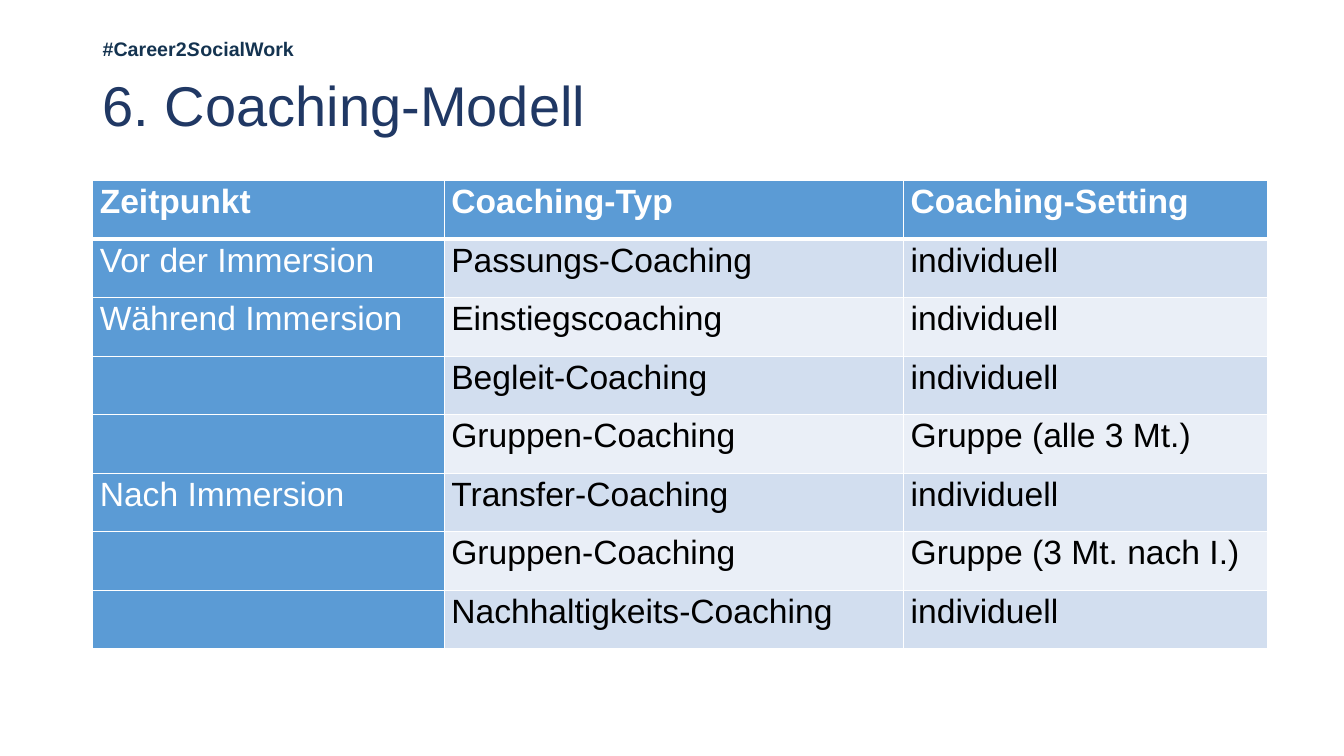
from pptx import Presentation
from pptx.dml.color import RGBColor
from pptx.enum.text import MSO_ANCHOR as Anchor, MSO_AUTO_SIZE as AutoSize, PP_ALIGN as Align
from pptx.oxml import parse_xml
from pptx.oxml.ns import nsdecls
from pptx.util import Inches, Pt

NAVY = RGBColor(0x20, 0x38, 0x64)
PETROL = RGBColor(0x14, 0x33, 0x50)
BLUE = RGBColor(0x5B, 0x9B, 0xD5)
BAND_DARK = RGBColor(0xD2, 0xDE, 0xEF)
BAND_LIGHT = RGBColor(0xEA, 0xEF, 0xF7)
WHITE = RGBColor(0xFF, 0xFF, 0xFF)
BLACK = RGBColor(0, 0, 0)

SLIDE_WIDTH, SLIDE_HEIGHT = Inches(13.33), Inches(7.5)

# Left, top, width and height in percent of the slide
HASHTAG_BOX = (6.9, 4.13, 32.1, 4.53)
TITLE_BOX = (6.9, 9.33, 86.25, 10)
TABLE_BOX = (6.9, 23.87, 87.4, 62)

# Text and character spacing in hundredths of a point
HASHTAG = [("#Career", 0), ("2", 10), ("S", 30), ("ocialWork", 0)]
COLUMN_WEIGHTS = [3.49, 4.56, 3.61]
COACHING_ROWS = [
    ("Zeitpunkt", "Coaching-Typ", "Coaching-Setting"),
    ("Vor der Immersion", "Passungs-Coaching", "individuell"),
    ("Während Immersion", "Einstiegscoaching", "individuell"),
    ("", "Begleit-Coaching", "individuell"),
    ("", "Gruppen-Coaching", "Gruppe (alle 3 Mt.)"),
    ("Nach Immersion", "Transfer-Coaching", "individuell"),
    ("", "Gruppen-Coaching", "Gruppe (3 Mt. nach I.)"),
    ("", "Nachhaltigkeits-Coaching", "individuell"),
]


def to_lengths(box):
    left, top, width, height = box
    return (int(SLIDE_WIDTH * left / 100), int(SLIDE_HEIGHT * top / 100),
            int(SLIDE_WIDTH * width / 100), int(SLIDE_HEIGHT * height / 100))


def apply(target, values):
    for name, value in values.items():
        setattr(target, name, value)


def add_span(para, text, color, **values):
    span = para.add_run()
    span.text = text
    apply(span.font, {"name": "Arial", **values})
    span.font.color.rgb = color
    return span


def add_hashtag(page, box):
    frame = page.shapes.add_textbox(*to_lengths(box)).text_frame
    apply(frame, {"word_wrap": True, "vertical_anchor": Anchor.BOTTOM,
                  "auto_size": AutoSize.SHAPE_TO_FIT_TEXT})
    for text, spacing in HASHTAG:
        span = add_span(frame.paragraphs[0], text, PETROL,
                        size=Pt(14), bold=True, italic=text == "S")
        if spacing:
            span.font._element.set("spc", str(spacing))


def fill_title(page, box):
    title = page.shapes.title
    apply(title, dict(zip(("left", "top", "width", "height"), to_lengths(box))))
    apply(title.text_frame, {"word_wrap": True, "vertical_anchor": Anchor.MIDDLE,
                             "auto_size": AutoSize.NONE})
    para = title.text_frame.paragraphs[0]
    apply(para, {"alignment": Align.LEFT, "line_spacing": 0.9})
    add_span(para, "6. Coaching-Modell", NAVY, size=Pt(40))


def set_borders(cell, widths):
    properties = cell._tc.get_or_add_tcPr()
    for side, width in widths.items():
        properties.append(parse_xml(
            f'<a:ln{side} {nsdecls("a")} w="{Pt(width)}"><a:solidFill>'
            f'<a:srgbClr val="{WHITE}"/></a:solidFill></a:ln{side}>'))


def format_cell(cell, text, row, column):
    is_header = row == 0
    is_blue = is_header or column == 0
    # Borders come before the fill in the cell properties
    set_borders(cell, {"L": 1, "R": 1, "T": 3 if row == 1 else 1,
                       "B": 3 if is_header else 1})
    cell.fill.solid()
    band = BAND_DARK if row % 2 else BAND_LIGHT
    cell.fill.fore_color.rgb = BLUE if is_blue else band
    if text:
        apply(cell, {"margin_left": Inches(0.07), "margin_right": Inches(0.07),
                     "margin_top": 0, "margin_bottom": 0})
        para = cell.text_frame.paragraphs[0]
        para.line_spacing = 1.07
        add_span(para, text, WHITE if is_blue else BLACK,
                 size=Pt(24), bold=is_header)


def add_coaching_table(page, box):
    left, top, width, height = to_lengths(box)
    table = page.shapes.add_table(len(COACHING_ROWS), len(COLUMN_WEIGHTS),
                                  left, top, width, height).table
    for column, weight in zip(table.columns, COLUMN_WEIGHTS):
        column.width = int(width * weight / sum(COLUMN_WEIGHTS))
    for row, texts in enumerate(COACHING_ROWS):
        for column, text in enumerate(texts):
            format_cell(table.cell(row, column), text, row, column)


def main():
    deck = Presentation()
    apply(deck, {"slide_width": SLIDE_WIDTH, "slide_height": SLIDE_HEIGHT})
    page = deck.slides.add_slide(deck.slide_layouts[5])
    add_hashtag(page, HASHTAG_BOX)
    fill_title(page, TITLE_BOX)
    add_coaching_table(page, TABLE_BOX)
    deck.save("out.pptx")


if __name__ == "__main__":
    main()
